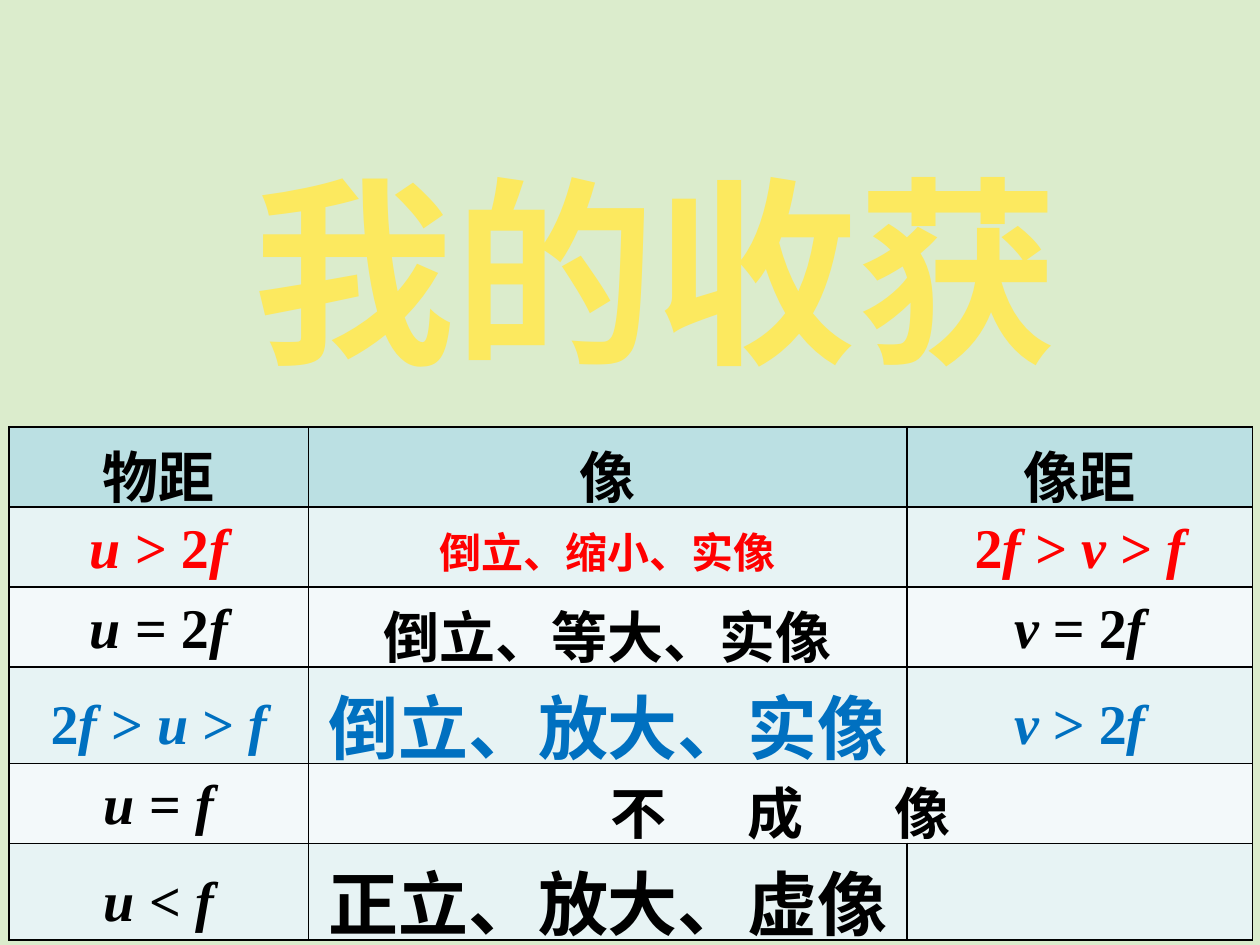
from itertools import groupby

from lxml import etree
from pptx import Presentation
from pptx.dml.color import RGBColor
from pptx.enum.text import MSO_ANCHOR, PP_ALIGN
from pptx.oxml import parse_xml
from pptx.oxml.ns import nsdecls, qn
from pptx.util import Inches, Pt

BACKGROUND = RGBColor(0xDB, 0xEC, 0xCC)
HEADER_FILL = RGBColor(0xBB, 0xE0, 0xE3)
ODD_FILL = RGBColor(0xE7, 0xF3, 0xF4)
EVEN_FILL = RGBColor(0xF3, 0xF9, 0xFA)
BLACK = RGBColor(0, 0, 0)
RED = RGBColor(0xFF, 0, 0)
BLUE = RGBColor(0, 0x70, 0xC0)

TITLE = "我的收获"
TITLE_STOPS = [(0, "FFF9BB"), (64, "FCE95F"), (100, "F8AD1C")]

# Each row: text colour, size of the image column, then the three cells
ROWS = [
    (BLACK, 32, ("物距", "像", "像距")),
    (RED, 24, ("u > 2f", "倒立、缩小、实像", "2f > v > f")),
    (BLACK, 32, ("u = 2f", "倒立、等大、实像", "v = 2f")),
    (BLUE, 40, ("2f > u > f", "倒立、放大、实像", "v > 2f")),
    (BLACK, 32, ("u = f", "不成像", None)),
    (BLACK, 40, ("u < f", "正立、放大、虚像", "")),
]
COLUMN_WIDTHS = [2.38, 4.75, 2.74]
ROW_HEIGHTS = [0.63, 0.57, 0.57, 0.57, 0.63, 0.63]
NO_IMAGE_ROW = 4
NO_IMAGE_GAPS = [("不", 46), ("成", 52), ("像", 0)]  # spacing after, in points
VARIABLES = "uvf"


def add_borders(cell):
    properties = cell._tc.get_or_add_tcPr()
    for side in ("lnL", "lnR", "lnT", "lnB"):
        properties.append(parse_xml(
            f'<a:{side} {nsdecls("a")} w="12700"><a:solidFill>'
            f'<a:srgbClr val="{BLACK}"/></a:solidFill></a:{side}>'))


def style_title(run):
    """Outline and gradient fill for the title letters."""
    properties = run._r.get_or_add_rPr()
    outline = parse_xml(
        f'<a:ln {nsdecls("a")} w="25400"><a:solidFill><a:srgbClr val="861E1D">'
        '<a:alpha val="94000"/></a:srgbClr></a:solidFill></a:ln>')
    gradient = etree.Element(qn("a:gradFill"))
    stops = etree.SubElement(gradient, qn("a:gsLst"))
    for position, colour in TITLE_STOPS:
        stop = etree.SubElement(stops, qn("a:gs"), pos=str(position * 1000))
        etree.SubElement(stop, qn("a:srgbClr"), val=colour)
    etree.SubElement(gradient, qn("a:lin"), ang="5400000")
    properties.insert(0, outline)
    properties.insert(1, gradient)


def add_run(paragraph, words, size, font, colour):
    run = paragraph.add_run()
    run.text = words
    run.font.size = Pt(size)
    run.font.name = font
    run.font.bold = True
    run.font.color.rgb = colour
    return run


presentation = Presentation()
presentation.slide_width, presentation.slide_height = Inches(10), Inches(7.5)
slide = presentation.slides.add_slide(presentation.slide_layouts[6])
slide.background.fill.solid()
slide.background.fill.fore_color.rgb = BACKGROUND

# Title
title = slide.shapes.add_textbox(Inches(1.58), Inches(1.11), Inches(7.25), Inches(2.04))
title.text_frame.word_wrap = True
title.text_frame.vertical_anchor = MSO_ANCHOR.MIDDLE
paragraph = title.text_frame.paragraphs[0]
paragraph.alignment = PP_ALIGN.CENTER
run = paragraph.add_run()
run.text = TITLE
run.font.size, run.font.name, run.font.bold = Pt(115), "Arial", True
style_title(run)

# Table of object distance, image and image distance
frame = slide.shapes.add_table(len(ROWS), len(COLUMN_WIDTHS), Inches(0.07),
                               Inches(3.39), Inches(9.86), Inches(4.07))
table = frame.table
table.first_row = table.horz_banding = False
for column, width in zip(table.columns, COLUMN_WIDTHS):
    column.width = Inches(width)
for row, height in zip(table.rows, ROW_HEIGHTS):
    row.height = Inches(height)
frame.height = Inches(4.07)
table.cell(NO_IMAGE_ROW, 1).merge(table.cell(NO_IMAGE_ROW, 2))

for row_index, (colour, image_size, texts) in enumerate(ROWS):
    font = "Times New Roman" if row_index else "Arial"
    band = ODD_FILL if row_index % 2 else EVEN_FILL
    for column_index, words in enumerate(texts):
        cell = table.cell(row_index, column_index)
        add_borders(cell)
        cell.fill.solid()
        cell.fill.fore_color.rgb = band if row_index else HEADER_FILL
        cell.vertical_anchor = MSO_ANCHOR.BOTTOM
        if not words:
            continue
        paragraph = cell.text_frame.paragraphs[0]
        paragraph.alignment = PP_ALIGN.CENTER
        size = image_size if column_index == 1 else 32
        if (row_index, column_index) == (NO_IMAGE_ROW, 1):
            for letter, gap in NO_IMAGE_GAPS:
                run = add_run(paragraph, letter, size, font, colour)
                run._r.get_or_add_rPr().set("spc", str(gap * 100))
            continue
        # Variables are italic, numbers and signs upright
        for italic, letters in groupby(words, lambda letter: letter in VARIABLES):
            add_run(paragraph, "".join(letters), size, font, colour).font.italic = italic

presentation.save("out.pptx")
